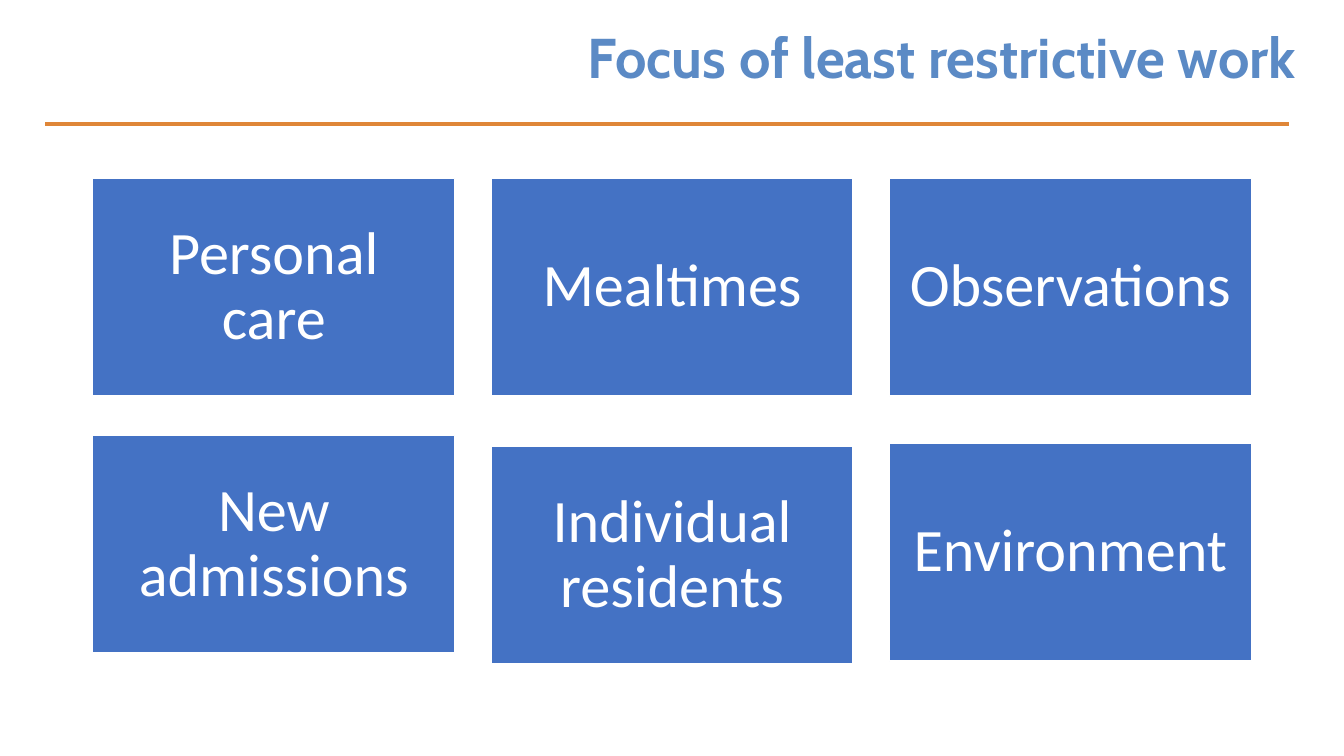
from dataclasses import dataclass

from pptx import Presentation
from pptx.dml.color import RGBColor as RGB
from pptx.enum.shapes import MSO_CONNECTOR as CONN, MSO_SHAPE as SHAPE
from pptx.enum.text import MSO_ANCHOR as ANCHOR, PP_ALIGN as ALIGN
from pptx.oxml.ns import qn
from pptx.util import Inches, Pt
from lxml.etree import SubElement


@dataclass(frozen=True)
class Theme:
    title: RGB = RGB.from_string("5B8AC5")
    rule: RGB = RGB.from_string("DF8638")
    tile: RGB = RGB.from_string("4472C4")
    white: RGB = RGB.from_string("FFFFFF")
    title_font: str = "Cabin"
    tile_font: str = "Calibri"
    title_size: int = 40
    tile_size: int = 43


THEME = Theme()
TILE_W, TILE_H = 3.59, 2.16
COLUMN_STEP = 3.95
FOCUS_AREAS = [
    ("Personal care", 0), ("Mealtimes", 0), ("Observations", 0),
    ("New admissions", 2.55), ("Individual residents", 2.66), ("Environment", 2.63),
]


def set_text(sp, text, align, font, size, color, bold=False):
    tf = sp.text_frame
    tf.word_wrap = True
    p = tf.paragraphs[0]
    p.text = text
    p.alignment = align
    p.line_spacing = 0.9
    p.font.name = font
    p.font.size = Pt(size)
    p.font.bold = bold
    p.font.color.rgb = color
    return tf


def add_header(s, x, y, w, text):
    right = x + w
    line = s.shapes.add_connector(CONN.STRAIGHT, Inches(x), Inches(y + 0.98),
                                  Inches(right), Inches(y + 0.98))
    line.line.color.rgb = THEME.rule
    line.line.width = Pt(2.25)
    SubElement(line._element.spPr, qn("a:effectLst"))

    sp = s.shapes.add_textbox(Inches(right - 8.4), Inches(y), Inches(8.57), Inches(0.6))
    tf = set_text(sp, text, ALIGN.RIGHT, THEME.title_font, THEME.title_size,
                  THEME.title, bold=True)
    tf.vertical_anchor = ANCHOR.TOP


def add_tile(s, x, y, text):
    sp = s.shapes.add_shape(SHAPE.RECTANGLE, Inches(x), Inches(y),
                            Inches(TILE_W), Inches(TILE_H))
    sp.shadow.inherit = False
    sp.fill.solid()
    sp.fill.fore_color.rgb = THEME.tile
    sp.line.color.rgb = THEME.white
    sp.line.width = Pt(1)
    tf = set_text(sp, text, ALIGN.CENTER, THEME.tile_font, THEME.tile_size, THEME.white)
    tf.vertical_anchor = ANCHOR.MIDDLE
    tf.margin_left = tf.margin_right = Inches(0.18)
    tf.margin_top = tf.margin_bottom = Inches(0.18)


def add_tiles(s, x, y, areas):
    for i, (text, drop) in enumerate(areas):
        add_tile(s, x + i % 3 * COLUMN_STEP, y + drop, text)


def main():
    prs = Presentation()
    prs.slide_width, prs.slide_height = Inches(13.33), Inches(7.5)
    s = prs.slides.add_slide(prs.slide_layouts[6])
    add_header(s, 0.45, 0.25, 12.33, "Focus of least restrictive work")
    add_tiles(s, 0.92, 1.77, FOCUS_AREAS)
    prs.save("out.pptx")


if __name__ == "__main__":
    main()
